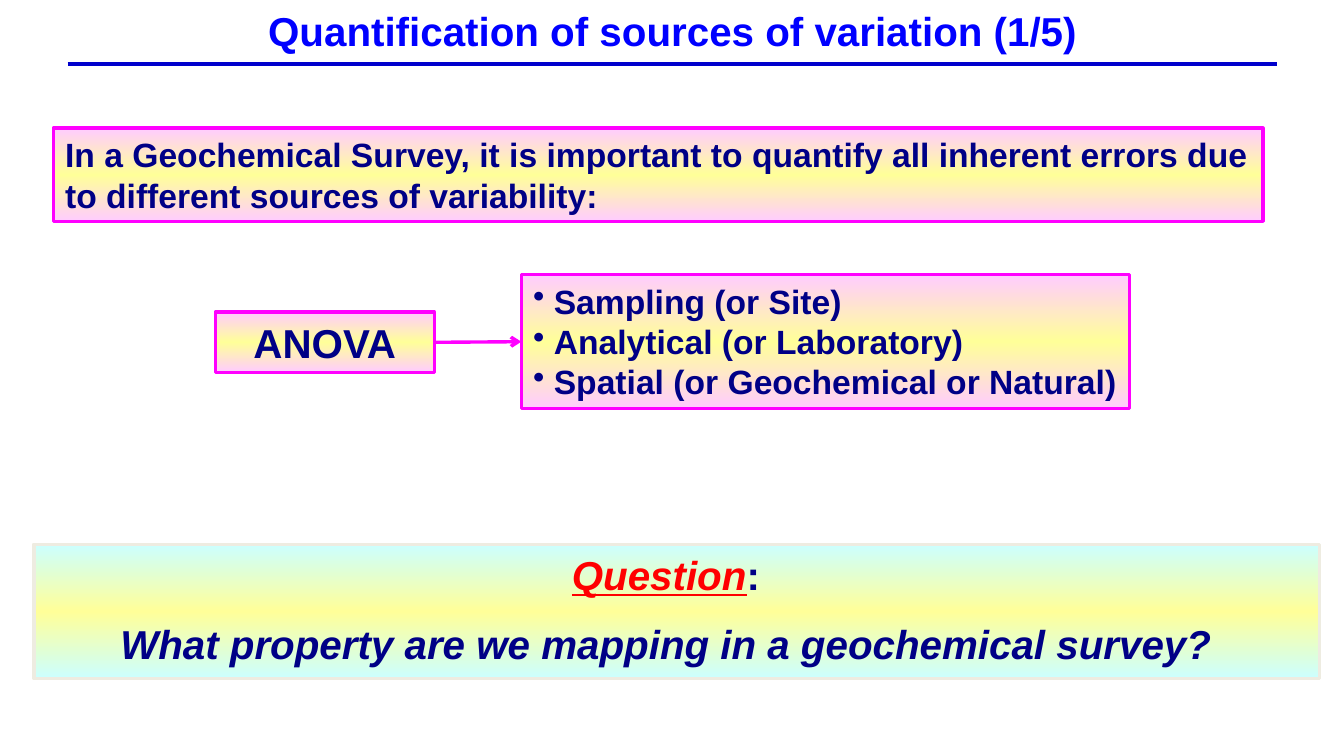
from copy import deepcopy
from dataclasses import dataclass

from pptx import Presentation
from pptx.dml.color import RGBColor
from pptx.enum.shapes import MSO_CONNECTOR, MSO_SHAPE
from pptx.enum.text import MSO_ANCHOR, PP_ALIGN
from pptx.oxml.ns import qn
from pptx.oxml.xmlchemy import OxmlElement
from pptx.shapes.autoshape import Shape
from pptx.shapes.connector import Connector
from pptx.slide import Slide
from pptx.text.text import Font
from pptx.util import Inches, Pt

RECTANGLE = MSO_SHAPE.RECTANGLE
STRAIGHT = MSO_CONNECTOR.STRAIGHT
TOP = MSO_ANCHOR.TOP
LEFT, CENTER = PP_ALIGN.LEFT, PP_ALIGN.CENTER

NAVY, BLUE, RULE_BLUE, RED = "000086", "0000FF", "0000CC", "FF0000"
MAGENTA, PINK, YELLOW, CYAN, CREAM = "FF00FF", "FFCCFF", "FFFF99", "CCFFFF", "EEECE1"


@dataclass
class Panel:
    left: float
    top: float
    width: float
    height: float
    text: str
    size: int = 20
    align: PP_ALIGN = LEFT
    edge: str = PINK
    outline: str = MAGENTA


def rgb(color: str) -> RGBColor:
    return RGBColor.from_string(color)


def style_font(font: Font, size: int, color: str) -> None:
    font.name = "Arial"
    font.size = Pt(size)
    font.bold = True
    font.color.rgb = rgb(color)


def fill_banded(shape: Shape, edge: str, middle: str) -> None:
    """Fill with a vertical gradient running edge, middle, edge."""
    shape.fill.gradient()
    shape.fill.gradient_angle = 270
    stop_list = shape._element.spPr.find(qn("a:gradFill")).find(qn("a:gsLst"))
    stop_list.append(deepcopy(stop_list[0]))
    for index, (stop, color) in enumerate(
        zip(shape.fill.gradient_stops, (edge, middle, edge))
    ):
        stop.position = index / 2
        stop.color.rgb = rgb(color)


def add_panel(slide: Slide, panel: Panel) -> Shape:
    box = slide.shapes.add_shape(
        RECTANGLE, Inches(panel.left), Inches(panel.top),
        Inches(panel.width), Inches(panel.height),
    )
    box.shadow.inherit = False
    fill_banded(box, panel.edge, YELLOW)
    box.line.color.rgb = rgb(panel.outline)
    box.line.width = Pt(2)
    frame = box.text_frame
    frame.word_wrap = True
    frame.vertical_anchor = TOP
    frame.text = panel.text
    for paragraph in frame.paragraphs:
        paragraph.alignment = panel.align
        for run in paragraph.runs:
            style_font(run.font, panel.size, NAVY)
    return box


def add_bullets(box: Shape) -> None:
    for paragraph in box.text_frame.paragraphs:
        properties = paragraph._p.get_or_add_pPr()
        properties.set("marL", str(Inches(0.17)))
        properties.set("indent", str(Inches(-0.17)))
        bullet = OxmlElement("a:buChar")
        bullet.set("char", "•")
        properties.append(bullet)


def add_line(slide: Slide, start: tuple[float, float], end: tuple[float, float],
             color: str, width: float) -> Connector:
    line = slide.shapes.add_connector(
        STRAIGHT, *(Inches(value) for value in start + end)
    )
    line.line.color.rgb = rgb(color)
    line.line.width = Pt(width)
    line._element.spPr.append(OxmlElement("a:effectLst"))
    return line


def add_title(slide: Slide, text: str) -> None:
    title = slide.shapes.title
    title.left, title.top = Inches(0.56), Inches(0)
    title.width, title.height = Inches(10), Inches(0.5)
    frame = title.text_frame
    frame.text = text
    frame.word_wrap = True
    frame.vertical_anchor = TOP
    frame.paragraphs[0].alignment = CENTER
    style_font(frame.paragraphs[0].runs[0].font, 24, BLUE)


def style_question(box: Shape) -> None:
    heading, question = box.text_frame.paragraphs
    heading._p.get_or_add_pPr().set("marR", str(Inches(0.18)))
    label = heading.runs[0]
    label.text = "Question"
    label.font.italic = label.font.underline = True
    label.font.color.rgb = rgb(RED)
    colon = heading.add_run()
    colon.text = ":"
    style_font(colon.font, 24, NAVY)
    question.space_before = Pt(12)
    question.runs[0].font.italic = True


def main() -> None:
    deck = Presentation()
    deck.slide_width, deck.slide_height = Inches(11.11), Inches(6.25)
    slide = deck.slides.add_slide(deck.slide_layouts[5])

    add_title(slide, "Quantification of sources of variation (1/5)")
    add_line(slide, (0.56, 0.53), (10.56, 0.53), RULE_BLUE, 2.25)

    add_panel(slide, Panel(
        0.44, 1.06, 10, 0.77,
        "In a Geochemical Survey, it is important to quantify all inherent "
        "errors due to different sources of variability:",
    ))
    anova = add_panel(slide, Panel(1.78, 2.58, 1.81, 0.5, "ANOVA", 24, CENTER))
    sources = add_panel(slide, Panel(
        4.31, 2.27, 5.03, 1.11,
        "Sampling (or Site)\nAnalytical (or Laboratory)\n"
        "Spatial (or Geochemical or Natural)",
    ))
    add_bullets(sources)

    arrow = add_line(slide, (3.59, 2.83), (4.31, 2.82), MAGENTA, 2)
    arrow.begin_connect(anova, 3)
    arrow.end_connect(sources, 1)
    head = OxmlElement("a:tailEnd")
    head.set("type", "arrow")
    arrow.line._get_or_add_ln().append(head)

    question = add_panel(slide, Panel(
        0.28, 4.5, 10.63, 1.11,
        "Question\nWhat property are we mapping in a geochemical survey?",
        24, CENTER, CYAN, CREAM,
    ))
    style_question(question)

    deck.save("out.pptx")


if __name__ == "__main__":
    main()
